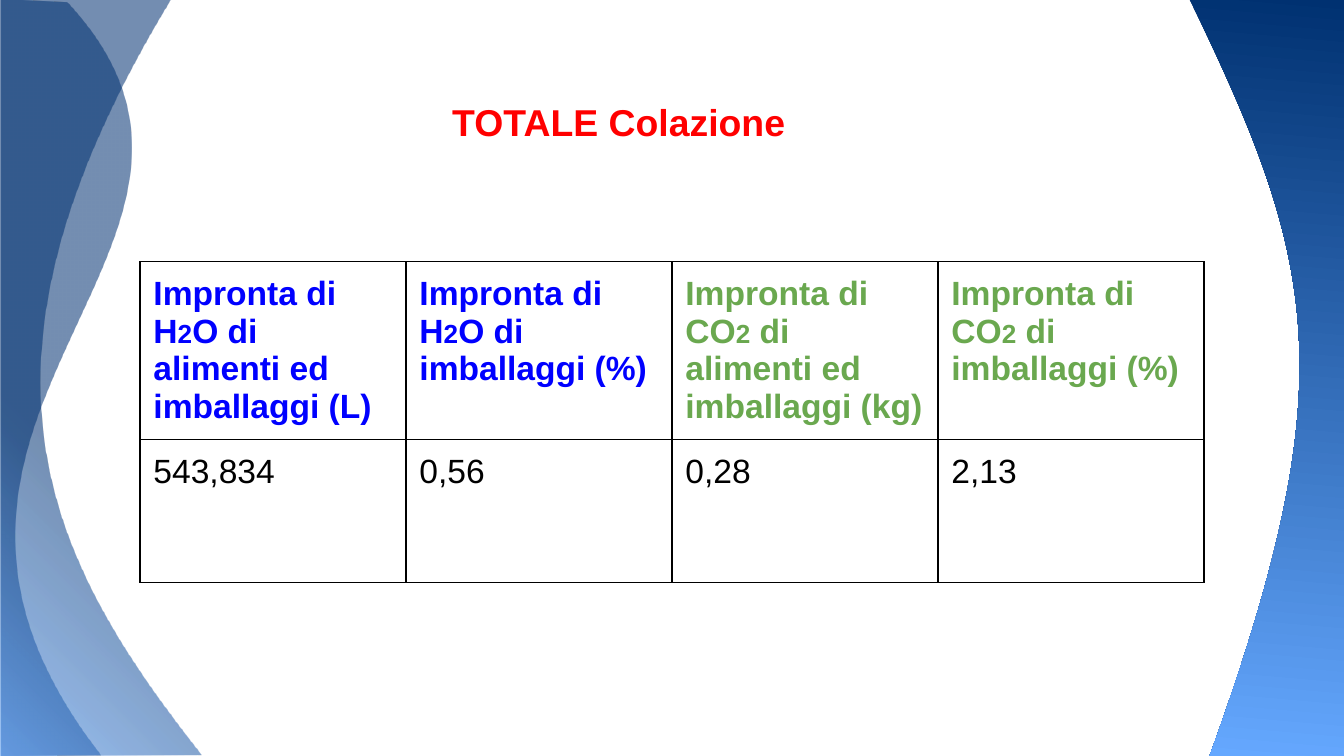
from lxml import etree
from pptx import Presentation
from pptx.dml.color import RGBColor
from pptx.enum.text import PP_ALIGN
from pptx.oxml import parse_xml
from pptx.oxml.ns import nsdecls, qn
from pptx.util import Pt

CENTER = PP_ALIGN.CENTER
RED = RGBColor(0xFF, 0x00, 0x00)
BLUE = RGBColor(0x00, 0x00, 0xFF)
GREEN = RGBColor(0x6A, 0xA8, 0x4F)
BLACK = RGBColor(0x00, 0x00, 0x00)
NAVY = RGBColor(0x00, 0x31, 0x71)
AZURE = RGBColor(0x54, 0x9F, 0xFF)
SKY = RGBColor(0x65, 0xA8, 0xFF)

GLOW = ('<a:path path="circle">'
        '<a:fillToRect l="0" t="100000" r="100000" b="0"/></a:path>')
DOWNWARD = '<a:lin ang="5700000" scaled="0"/>'
GLOW_STOPS = [(0, AZURE), (41, NAVY), (100, NAVY)]
DOWNWARD_STOPS = [(0, NAVY), (100, SKY)]

# Outlines in points; the last three points of each form a Bezier curve
WAVES = [
    ([(108, 404), (0, 404.6), (0, -1.5), (91.5, 0),
      (-27.4, 195.8), (23.8, 297.4), (108, 404)],
     GLOW_STOPS, 54, GLOW),
    ([(54, 404), (0.7, 404.6), (0.7, 0), (36, 1.5),
      (156.2, 131), (-87.8, 221.8), (54, 404)],
     GLOW_STOPS, 54, GLOW),
    ([(637.2, -0.5), (723.6, -0.5), (723.6, 405), (648, 405),
      (720.7, 204.5), (706.3, 141), (637.2, -0.5)],
     DOWNWARD_STOPS, 100, DOWNWARD),
]

HEADERS = [
    ("Impronta di H", "O di alimenti ed imballaggi (L)", BLUE),
    ("Impronta di H", "O di imballaggi (%)", BLUE),
    ("Impronta di CO", " di alimenti ed imballaggi (kg)", GREEN),
    ("Impronta di CO", " di imballaggi (%)", GREEN),
]
VALUES = ["543,834", "0,56", "0,28", "2,13"]


def add_run(paragraph, text, size, color, bold):
    run = paragraph.add_run()
    run.text = text
    style = {"name": "Arial", "size": Pt(size), "bold": bold}
    for name, value in style.items():
        setattr(run.font, name, value)
    run.font.color.rgb = color


presentation = Presentation()
presentation.slide_width = Pt(720)
presentation.slide_height = Pt(405)
slide = presentation.slides.add_slide(presentation.slide_layouts[6])

# Curved bands on both sides, drawn mirrored and turned half round
for outline, stops, opacity, direction in WAVES:
    columns, rows = zip(*outline)
    across = min(columns) + max(columns)
    down = min(rows) + max(rows)
    turned = [(Pt(across - x), Pt(down - y)) for x, y in outline]
    builder = slide.shapes.build_freeform(*turned[0], scale=1.0)
    builder.add_line_segments(turned[1:], close=True)
    wave = builder.convert_to_shape()
    wave.rotation = 180
    wave.shadow.inherit = False
    wave.line.fill.background()

    geometry = wave._element.spPr.find(qn("a:custGeom"))
    curve_lines = list(geometry.iter(qn("a:lnTo")))[-3:]
    curve = parse_xml(f'<a:cubicBezTo {nsdecls("a")}/>')
    curve_lines[0].addprevious(curve)
    for line in curve_lines:
        curve.append(line[0])
        line.getparent().remove(line)

    stop_xml = "".join(
        f'<a:gs pos="{position * 1000}"><a:srgbClr val="{color}">'
        f'<a:alpha val="{opacity * 1000}"/></a:srgbClr></a:gs>'
        for position, color in stops)
    geometry.addnext(parse_xml(
        f'<a:gradFill {nsdecls("a")} rotWithShape="0">'
        f'<a:gsLst>{stop_xml}</a:gsLst>{direction}</a:gradFill>'))

# Totals table
table = slide.shapes.add_table(
    2, 4, Pt(75), Pt(140.2), Pt(570), Pt(172)).table
table.first_row = False
table.horz_banding = False
for row, height in zip(table.rows, (95, 77)):
    row.height = Pt(height)
for column in table.columns:
    column.width = Pt(142.5)

for index, (header, value) in enumerate(zip(HEADERS, VALUES)):
    start, end, color = header
    paragraph = table.cell(0, index).text_frame.paragraphs[0]
    for text, size in ((start, 18), ("2", 14), (end, 18)):
        add_run(paragraph, text, size, color, True)
    paragraph = table.cell(1, index).text_frame.paragraphs[0]
    add_run(paragraph, value, 18, BLACK, False)

for cell in table.iter_cells():
    for side in ("left", "top", "right", "bottom"):
        setattr(cell, f"margin_{side}", Pt(7.2))
    properties = cell._tc.get_or_add_tcPr()
    for side in ("lnL", "lnR", "lnT", "lnB"):
        border = etree.SubElement(properties, qn(f"a:{side}"), w=str(Pt(0.75)))
        fill = etree.SubElement(border, qn("a:solidFill"))
        etree.SubElement(fill, qn("a:srgbClr"), val=str(BLACK))
    cell.fill.background()

# Title
title = slide.shapes.add_textbox(Pt(207), Pt(49.5), Pt(249), Pt(32))
title.text_frame.word_wrap = True
paragraph = title.text_frame.paragraphs[0]
paragraph.alignment = CENTER
add_run(paragraph, "TOTALE Colazione", 20, RED, True)

presentation.save("out.pptx")
